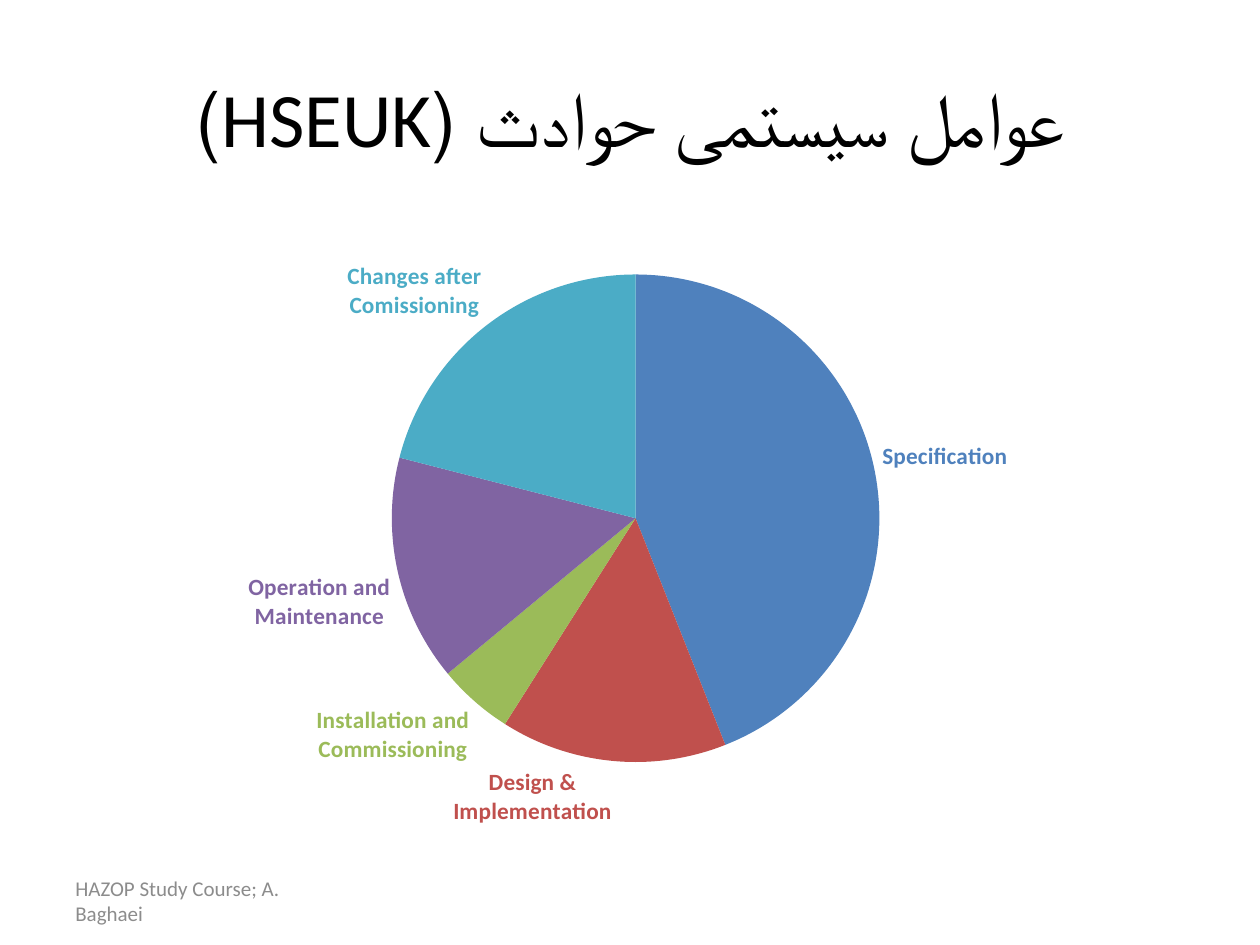
"""Build a slide with a pie chart of the system causes of accidents."""
import dataclasses

import pptx
import pptx.chart.data
import pptx.dml.color
import pptx.enum.chart
import pptx.enum.text
import pptx.oxml
import pptx.oxml.ns
import pptx.util

RGBColor = pptx.dml.color.RGBColor
ALIGN = pptx.enum.text.PP_ALIGN
BLACK = RGBColor(0x00, 0x00, 0x00)
GREY = RGBColor(0x8C, 0x8C, 0x8C)
BLUE = RGBColor(0x4F, 0x81, 0xBD)
RED = RGBColor(0xC0, 0x50, 0x4D)
GREEN = RGBColor(0x9B, 0xBB, 0x59)
PURPLE = RGBColor(0x80, 0x64, 0xA2)
TEAL = RGBColor(0x4B, 0xAC, 0xC6)
FACE = "Calibri"
WIDE, HIGH = pptx.util.Inches(10), pptx.util.Inches(7.5)


@dataclasses.dataclass(frozen=True)
class Box:
    """A place given in shares of the slide's size."""
    left: float
    top: float
    width: float
    height: float

    def spans(self) -> tuple[int, int, int, int]:
        """Return left, top, width and height as lengths."""
        return (round(self.left * WIDE), round(self.top * HIGH),
                round(self.width * WIDE), round(self.height * HIGH))


@dataclasses.dataclass(frozen=True)
class Slice:
    """One cause and its share of the accidents."""
    name: str
    share: int
    color: RGBColor


SLICES = (
    Slice("Specification", 44, BLUE),
    Slice("Design & Implementation", 15, RED),
    Slice("Installation and Commissioning", 5, GREEN),
    Slice("Operation and Maintenance", 15, PURPLE),
    Slice("Changes after Comissioning", 21, TEAL),
)


def style(font, size: float, color: RGBColor, bold: bool = False) -> None:
    """Set the face, size, colour and weight of a font."""
    font.name, font.size, font.bold = FACE, pptx.util.Pt(size), bold
    font.color.rgb = color


def write(shape, text: str, *, box: Box, size: float, color: RGBColor,
          align=ALIGN.LEFT, rtl: bool = False) -> None:
    """Place a shape and fill it with one formatted paragraph."""
    shape.left, shape.top, shape.width, shape.height = box.spans()
    frame = shape.text_frame
    frame.word_wrap = True
    frame.auto_size = pptx.enum.text.MSO_AUTO_SIZE.NONE
    frame.vertical_anchor = pptx.enum.text.MSO_ANCHOR.MIDDLE
    para = frame.paragraphs[0]
    para.alignment = align
    if rtl:
        para._p.get_or_add_pPr().set("rtl", "1")
    run = para.add_run()
    run.text = text
    style(run.font, size, color)


def set_plot(chart, box: Box) -> None:
    """Fix the inner plot area in shares of the chart's size."""
    area = chart._chartSpace.chart.plotArea
    for old in area.findall(pptx.oxml.ns.qn("c:layout")):
        area.remove(old)
    spots = zip("xywh", (box.left, box.top, box.width, box.height))
    parts = "".join(f'<c:{key} val="{val}"/>' for key, val in spots)
    area.insert(0, pptx.oxml.parse_xml(
        f'<c:layout {pptx.oxml.ns.nsdecls("c")}><c:manualLayout>'
        '<c:layoutTarget val="inner"/><c:xMode val="edge"/>'
        f'<c:yMode val="edge"/>{parts}</c:manualLayout></c:layout>'))


def paint(point, item: Slice) -> None:
    """Colour a slice and show its name in the same colour."""
    point.format.fill.solid()
    point.format.fill.fore_color.rgb = item.color
    label = point.data_label
    style(label.font, 13.3, item.color, bold=True)
    label.position = pptx.enum.chart.XL_LABEL_POSITION.OUTSIDE_END
    node = label._get_or_add_dLbl()
    for tag, val in (("c:showVal", "0"), ("c:showCatName", "1")):
        node.find(pptx.oxml.ns.qn(tag)).set("val", val)


def add_pie(slide, box: Box) -> None:
    """Add the pie chart of causes."""
    data = pptx.chart.data.CategoryChartData(number_format="General")
    data.categories = [item.name for item in SLICES]
    data.add_series("Series 1", [item.share for item in SLICES])
    kind = pptx.enum.chart.XL_CHART_TYPE.PIE
    chart = slide.shapes.add_chart(kind, *box.spans(), data).chart
    chart.has_title = chart.has_legend = False
    style(chart.font, 10, BLACK)
    set_plot(chart, Box(0.29, 0.085, 0.43, 0.785))
    plot = chart.plots[0]
    plot.vary_by_categories = True
    series = plot.series[0]
    labels = series.data_labels
    labels.show_category_name, labels.show_value = True, False
    labels.number_format, labels.number_format_is_linked = "0%", False
    labels.position = pptx.enum.chart.XL_LABEL_POSITION.OUTSIDE_END
    for spot, item in enumerate(SLICES):
        paint(series.points[spot], item)


def main() -> None:
    """Build and save the slide."""
    deck = pptx.Presentation()
    deck.slide_width, deck.slide_height = WIDE, HIGH
    slide = deck.slides.add_slide(deck.slide_layouts[5])
    write(slide.shapes.title, "عوامل سیستمی حوادث (HSEUK)",
          box=Box(0.05, 0.04, 0.9, 1 / 6), size=44, color=BLACK,
          align=ALIGN.CENTER, rtl=True)
    add_pie(slide, Box(0.05, 7 / 30, 0.9, 0.66))
    foot = Box(0.05, 0.927, 0.233, 0.053)
    write(slide.shapes.add_textbox(*foot.spans()),
          "HAZOP Study Course; A. Baghaei", box=foot, size=12, color=GREY)
    deck.save("out.pptx")


if __name__ == "__main__":
    main()
